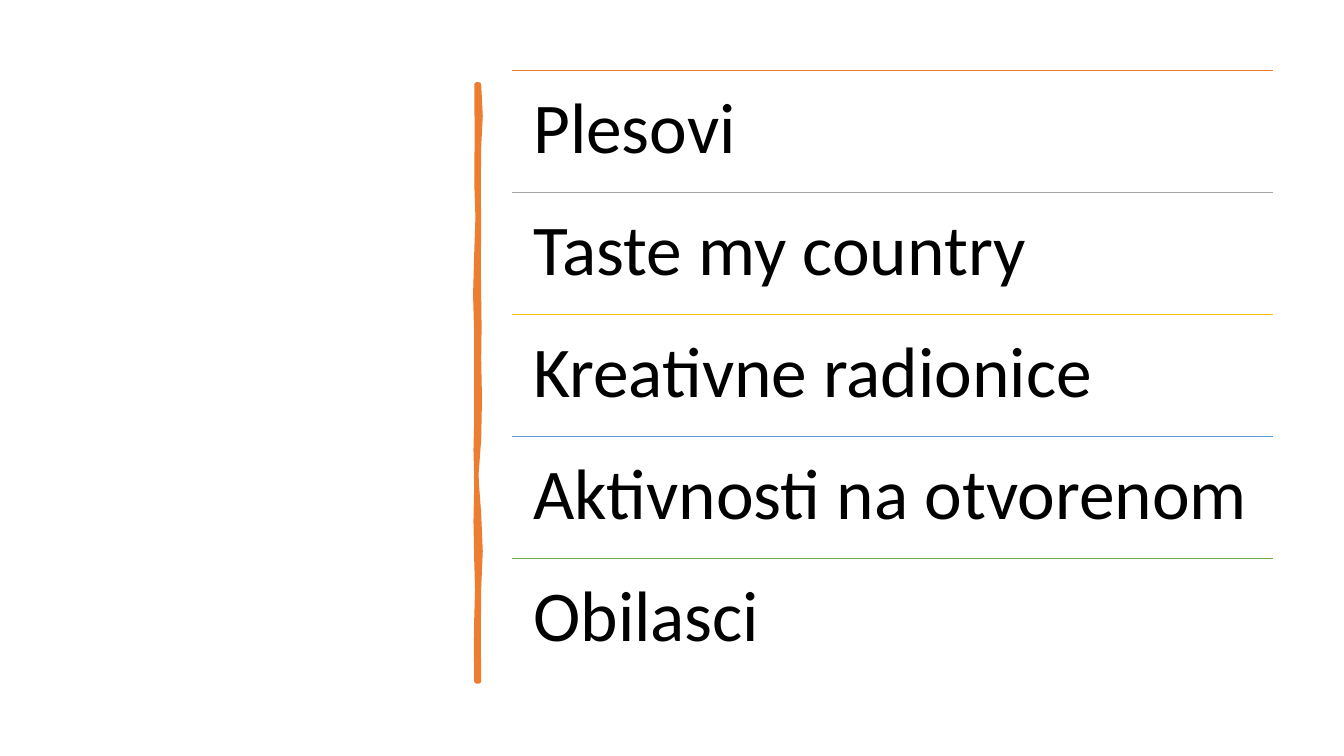
"""Build a slide that lists five activities beside a hand-drawn bar."""
from dataclasses import dataclass

from lxml.etree import SubElement
from pptx import Presentation
from pptx.dml.color import RGBColor
from pptx.enum.shapes import MSO_CONNECTOR
from pptx.enum.text import MSO_ANCHOR, PP_ALIGN
from pptx.oxml.ns import qn
from pptx.util import Cm, Pt


@dataclass(frozen=True)
class Theme:
    ink: str = "000000"
    bar: str = "ED7D31"
    font: str = "Calibri"
    size: float = 51
    rule: float = 1
    brush: float = 3.25


@dataclass(frozen=True)
class Item:
    text: str
    color: str


@dataclass(frozen=True)
class Wave:
    end: float
    bend: float


THEME = Theme()
ITEMS = (
    Item("Plesovi", "ED7D31"),
    Item("Taste my country", "A5A5A5"),
    Item("Kreativne radionice", "FFC000"),
    Item("Aktivnosti na otvorenom", "5B9BD5"),
    Item("Obilasci", "70AD47"),
)
LEFT, TOP, WIDTH, HEIGHT = 12.9, 1.78, 19.18, 15.37
PITCH = HEIGHT / len(ITEMS)
INSET = 0.54
HEAD = 2.13
RIGHT_X, LEFT_X = 12.07, 12.01

DOWN = (
    Wave(3.71, 0.04), Wave(5.74, -0.01), Wave(7.47, -0.01), Wave(9.04, 0.01),
    Wave(11.07, 0.02), Wave(12.95, -0.07), Wave(14.83, 0.04), Wave(17.17, -0.01),
)
UP = (
    Wave(15.57, -0.01), Wave(14.15, 0.02), Wave(12.12, -0.02), Wave(10.54, -0.02),
    Wave(8.51, 0), Wave(6.35, -0.03), Wave(4.6, 0.03), Wave(HEAD, 0.01),
)


def trace(x: float, y: float, waves: tuple[Wave, ...]) -> list[tuple[int, int]]:
    """Return points along a wavy edge that starts at x, y."""
    points = [(Cm(x), Cm(y))]
    for wave in waves:
        points.append((Cm(x + wave.bend), Cm((y + wave.end) / 2)))
        points.append((Cm(x), Cm(wave.end)))
        y = wave.end
    return points


def draw_bar(slide) -> None:
    """Draw the upright brush stroke."""
    edge = trace(RIGHT_X, HEAD, DOWN) + trace(LEFT_X, DOWN[-1].end, UP)
    pen = slide.shapes.build_freeform(*edge[0])
    pen.add_line_segments(edge[1:], close=True)
    bar = pen.convert_to_shape()
    bar.shadow.inherit = False
    bar.fill.solid()
    bar.fill.fore_color.rgb = RGBColor.from_string(THEME.bar)
    bar.line.color.rgb = RGBColor.from_string(THEME.bar)
    bar.line.width = Pt(THEME.brush)
    SubElement(bar._element.spPr.find(qn("a:ln")), qn("a:round"))


def draw_rule(slide, y: float, color: str) -> None:
    """Draw a thin level line above an item."""
    rule = slide.shapes.add_connector(
        MSO_CONNECTOR.STRAIGHT, Cm(LEFT), Cm(y), Cm(LEFT + WIDTH), Cm(y))
    rule.line.color.rgb = RGBColor.from_string(color)
    rule.line.width = Pt(THEME.rule)
    SubElement(rule._element.spPr, qn("a:effectLst"))


def add_text(slide, text: str, *, y: float, size: float = THEME.size,
             color: str = THEME.ink, font: str = THEME.font) -> None:
    """Add one line of text at the given height."""
    box = slide.shapes.add_textbox(Cm(LEFT), Cm(y), Cm(WIDTH), Cm(PITCH))
    frame = box.text_frame
    frame.word_wrap = True
    frame.vertical_anchor = MSO_ANCHOR.TOP
    frame.margin_left = frame.margin_right = Cm(INSET)
    frame.margin_top = frame.margin_bottom = Cm(INSET)
    para = frame.paragraphs[0]
    para.alignment = PP_ALIGN.LEFT
    para.line_spacing = 0.9
    run = para.add_run()
    run.text = text
    run.font.name = font
    run.font.size = Pt(size)
    run.font.color.rgb = RGBColor.from_string(color)


def main() -> None:
    """Build and save the slide."""
    deck = Presentation()
    deck.slide_width, deck.slide_height = Cm(33.87), Cm(19.05)
    slide = deck.slides.add_slide(deck.slide_layouts[6])
    draw_bar(slide)
    for row, item in enumerate(ITEMS):
        y = TOP + row * PITCH
        draw_rule(slide, y, item.color)
        add_text(slide, item.text, y=y)
    deck.save("out.pptx")


if __name__ == "__main__":
    main()
